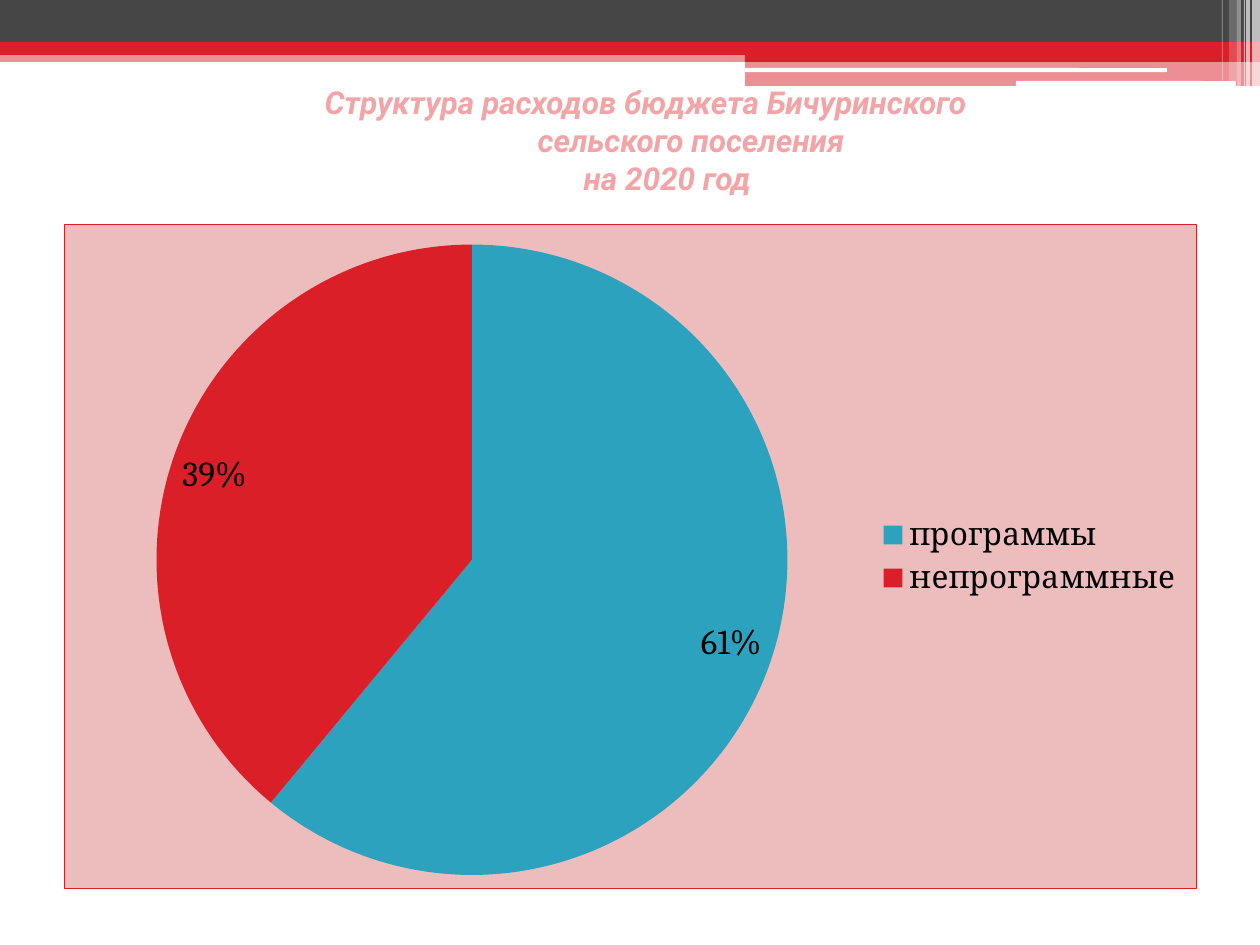
from lxml import etree
from pptx import Presentation
from pptx import util as u
from pptx.chart.data import CategoryChartData
from pptx.dml.color import RGBColor
from pptx.enum import chart as ch, shapes, text
from pptx.oxml import parse_xml
from pptx.oxml.ns import nsdecls, qn

SCALE = 914400 / 126  # EMU in one px
RED = RGBColor(0xDA, 0x1F, 0x28)
GREY = RGBColor(0x46, 0x46, 0x46)
WHITE = RGBColor(0xFF, 0xFF, 0xFF)
ROSE = RGBColor(0xF2, 0xA4, 0xA7)
PINK = RGBColor(0xED, 0xBD, 0xBE)
BLUE = RGBColor(0x2D, 0xA2, 0xBF)
BLACK = RGBColor(0, 0, 0)

# Header bands: left, top, width, height, colour, opacity in percent
BANDS = [
    (0, 50, 1260, 12, RED, 50),
    (0, 0, 1260, 43, GREY, 100),
    (0, 42, 1260, 13, RED, 100),
    (745, 49, 515, 13, RED, 100),
    (745, 61, 515, 25, RED, 50),
]
# White rules that cut the lower band
RULES = [(745, 68, 422, 4), (1016, 81, 220, 5)]
# Pale stripes at the right edge: left, width, height, opacity
STRIPES = [
    (1252, 8, 86, 65), (1246, 4, 86, 65), (1244, 1, 86, 60),
    (1237, 4, 86, 40), (1229, 8, 81, 20), (1222, 1, 81, 30),
]
# Title lines with their left indents
LINES = [
    ("Структура расходов бюджета Бичуринского", 197),
    ("сельского поселения", 410),
    ("на 2020 год", 456),
]
PARTS = [("программы", 0.61, BLUE), ("непрограммные", 0.39, RED)]


def px(n):
    return u.Emu(round(n * SCALE))


def apply(obj, fmt):
    for key, val in fmt.items():
        setattr(obj, key, val)


def place(obj, left, top, width, height):
    apply(obj, {"left": px(left), "top": px(top),
                "width": px(width), "height": px(height)})


def style(font, size, color, **more):
    apply(font, {"size": u.Pt(size), **more})
    font.color.rgb = color


def add_bar(slide, box, color, alpha=100, kind=shapes.MSO_SHAPE.RECTANGLE):
    bar = slide.shapes.add_shape(kind, *map(px, box))
    bar.shadow.inherit = False
    bar.fill.solid()
    bar.fill.fore_color.rgb = color
    bar.line.fill.background()
    if alpha < 100:
        tint = bar.fill._xPr.find(".//" + qn("a:srgbClr"))
        etree.SubElement(tint, qn("a:alpha")).set("val", str(alpha * 1000))


def set_title(slide):
    title = slide.shapes.title
    place(title, 115, 76, 1092, 128)
    frame = title.text_frame
    apply(frame, {"word_wrap": True, "auto_size": text.MSO_AUTO_SIZE.NONE,
                  "vertical_anchor": text.MSO_ANCHOR.MIDDLE})
    frame.text = "\n".join(line for line, _ in LINES)
    for para, (_, indent) in zip(frame.paragraphs, LINES):
        para.alignment = text.PP_ALIGN.LEFT
        para._p.get_or_add_pPr().set("marL", str(px(indent)))
        style(para.runs[0].font, 18, ROSE, name="Roboto", bold=True, italic=True)


def frame_chart(chart):
    # Background and border of the whole chart
    chart._chartSpace.find(qn("c:chart")).addnext(parse_xml(
        f'<c:spPr {nsdecls("c", "a")}>'
        f'<a:solidFill><a:srgbClr val="{PINK}"/></a:solidFill>'
        f'<a:ln w="{u.Pt(0.79)}"><a:solidFill><a:srgbClr val="{RED}"/>'
        '</a:solidFill></a:ln></c:spPr>'))
    # Place of the pie inside it
    spots = {"x": 0.08, "y": 0.03, "w": 0.56, "h": 0.95}
    plot = chart._chartSpace.find(".//" + qn("c:plotArea"))
    old = plot.find(qn("c:layout"))
    if old is not None:
        plot.remove(old)
    rows = '<c:layoutTarget val="inner"/><c:xMode val="edge"/><c:yMode val="edge"/>'
    rows += "".join(f'<c:{key} val="{val}"/>' for key, val in spots.items())
    plot.insert(0, parse_xml(
        f'<c:layout {nsdecls("c")}><c:manualLayout>{rows}</c:manualLayout></c:layout>'))


def add_pie(slide):
    data = CategoryChartData(number_format="0%")
    data.categories = [name for name, _, _ in PARTS]
    data.add_series("Series 1", [val for _, val, _ in PARTS])
    box = map(px, (64, 224, 1133, 665))
    chart = slide.shapes.add_chart(ch.XL_CHART_TYPE.PIE, *box, data).chart
    apply(chart, {"has_title": False, "has_legend": True})
    style(chart.font, 10, BLACK, name="Cambria")
    frame_chart(chart)
    # Legend
    apply(chart.legend, {"position": ch.XL_LEGEND_POSITION.RIGHT,
                         "include_in_layout": False})
    style(chart.legend.font, 18, BLACK, name="Cambria")
    # Slices and labels
    plot = chart.plots[0]
    apply(plot, {"vary_by_categories": True, "has_data_labels": True})
    for i, (_, _, color) in enumerate(PARTS):
        fill = plot.series[0].points[i].format.fill
        fill.solid()
        fill.fore_color.rgb = color
    labels = plot.data_labels
    apply(labels, {"show_value": True, "show_percentage": False,
                   "number_format": "0%", "number_format_is_linked": False,
                   "position": ch.XL_LABEL_POSITION.INSIDE_END})
    style(labels.font, 20, BLACK, name="Cambria")


def main():
    prs = Presentation()
    apply(prs, {"slide_width": px(1260), "slide_height": px(945)})
    slide = prs.slides.add_slide(prs.slide_layouts[5])
    # Header
    for *box, color, alpha in BANDS:
        add_bar(slide, box, color, alpha)
    for box in RULES:
        add_bar(slide, box, WHITE, kind=shapes.MSO_SHAPE.ROUNDED_RECTANGLE)
    for left, width, height, alpha in STRIPES:
        add_bar(slide, (left, 0, width, height), WHITE, alpha)
    # Content
    set_title(slide)
    add_pie(slide)
    prs.save("out.pptx")


if __name__ == "__main__":
    main()
